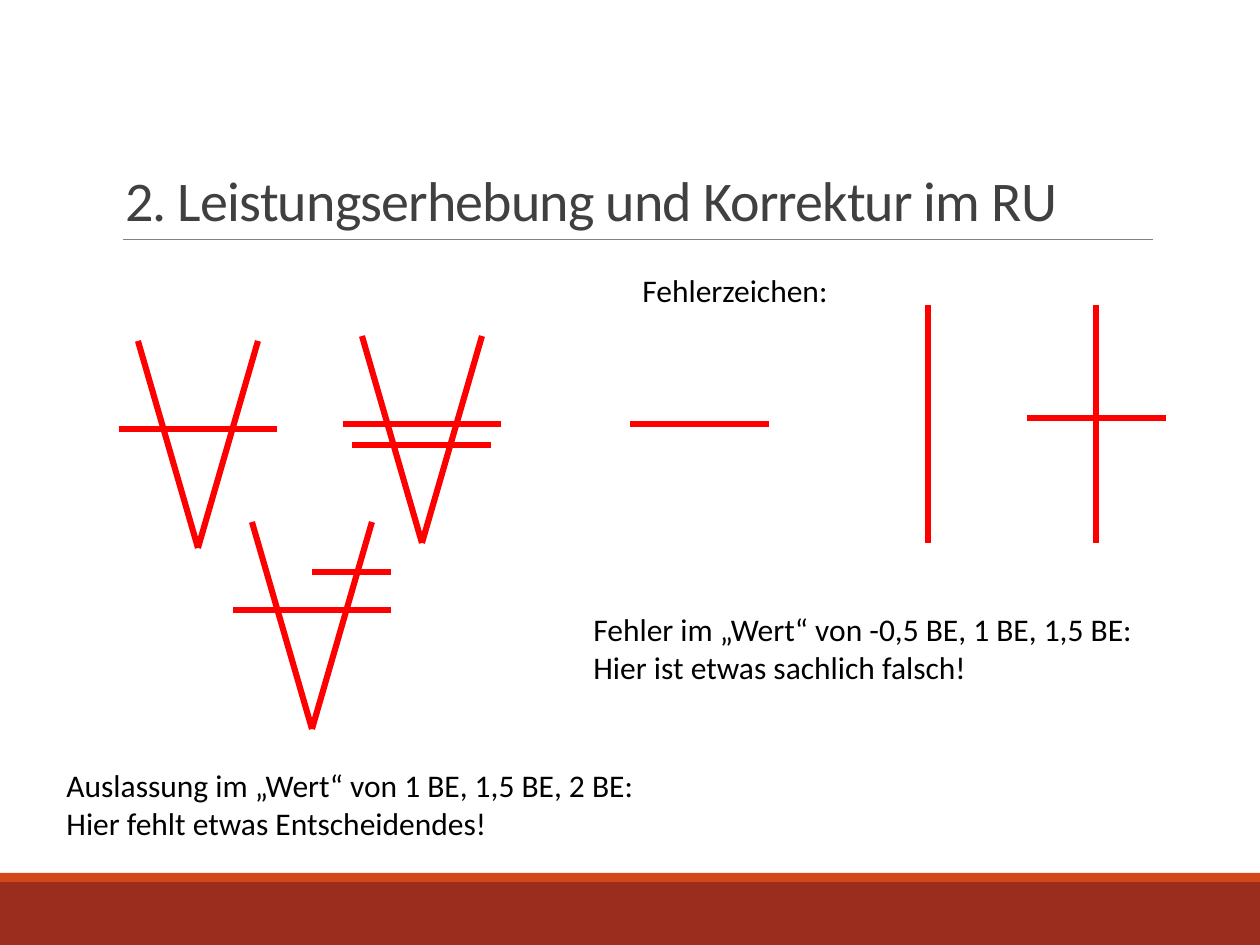
from pptx import Presentation
from pptx.dml.color import RGBColor
from pptx.enum.shapes import MSO_CONNECTOR as Connector, MSO_SHAPE as Shape
from pptx.enum.text import MSO_ANCHOR as Anchor
from pptx.oxml.ns import qn
from pptx.util import Pt
from lxml.etree import SubElement

PX = 914400 // 126
COLORS = {
    "band": "9B2D1F",
    "stripe": "D34817",
    "rule": "808080",
    "title": "404040",
    "text": "000000",
    "mark": "FF0000",
}

deck = Presentation()
deck.slide_width = 1260 * PX
deck.slide_height = 945 * PX
page = deck.slides.add_slide(deck.slide_layouts[6])


def add_line(x1, y1, x2, y2, color="mark", width=3.5):
    line = page.shapes.add_connector(
        Connector.STRAIGHT, x1 * PX, y1 * PX, x2 * PX, y2 * PX
    )
    line.line.color.rgb = RGBColor.from_string(COLORS[color])
    line.line.width = Pt(width)
    SubElement(line._element.spPr, qn("a:effectLst"))


def add_text(left, top, width, height, lines, size=18, color="text"):
    box = page.shapes.add_textbox(left * PX, top * PX, width * PX, height * PX)
    frame = box.text_frame
    frame.word_wrap = True
    for index, words in enumerate(lines):
        para = frame.add_paragraph() if index else frame.paragraphs[0]
        span = para.add_run()
        span.text = words
        span.font.name = "Calibri"
        span.font.size = Pt(size)
        span.font.color.rgb = RGBColor.from_string(COLORS[color])
    return frame


for top, height, color in [(882, 63, "band"), (873, 9, "stripe")]:
    bar = page.shapes.add_shape(Shape.RECTANGLE, 0, top * PX, 1260 * PX, height * PX)
    bar.shadow.inherit = False
    bar.fill.solid()
    bar.fill.fore_color.rgb = RGBColor.from_string(COLORS[color])
    bar.line.fill.background()

add_line(123, 239, 1153, 239, "rule", 0.5)
title = add_text(
    113, 39, 1040, 200, ["2. Leistungserhebung und Korrektur im RU"], 32, "title"
)
title.vertical_anchor = Anchor.BOTTOM
title.paragraphs[0].line_spacing = 0.85
title.paragraphs[0].runs[0].font._element.set("spc", "-50")

for x, y in [(198, 548), (422, 543), (312, 729)]:
    for side in (-60, 60):
        add_line(x + side, y - 207, x, y)
    add_line(x - 79, y - 119, x + 79, y - 119)
add_line(352, 445, 491, 445)
add_line(312, 572, 391, 572)

for x in (928, 1096):
    add_line(x, 305, x, 543)
for x, y in [(630, 424), (1027, 418)]:
    add_line(x, y, x + 139, y)

add_text(630, 265, 234, 50, ["Fehlerzeichen:"])
add_text(
    581, 604, 638, 89,
    ["Fehler im „Wert“ von -0,5 BE, 1 BE, 1,5 BE:", "Hier ist etwas sachlich falsch!"],
)
add_text(
    54, 760, 675, 89,
    ["Auslassung im „Wert“ von 1 BE, 1,5 BE, 2 BE:", "Hier fehlt etwas Entscheidendes!"],
)

deck.save("out.pptx")
